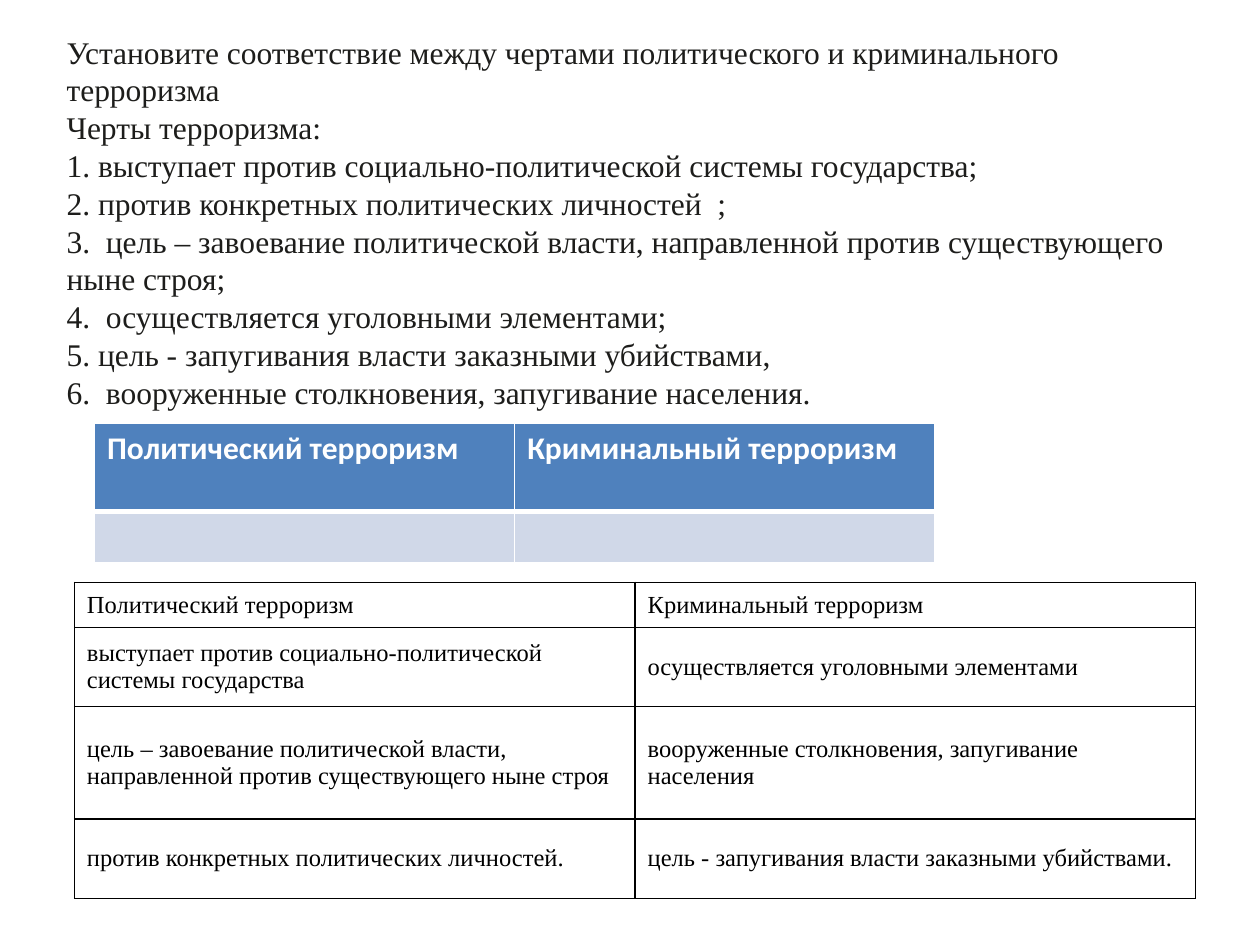
from lxml.etree import SubElement
from pptx import Presentation
from pptx.dml.color import RGBColor
from pptx.enum.text import MSO_ANCHOR, MSO_AUTO_SIZE
from pptx.oxml.ns import qn
from pptx.util import Inches, Pt

INK = RGBColor(0x1D, 0x1D, 0x1B)
BLACK = RGBColor(0x00, 0x00, 0x00)
WHITE = RGBColor(0xFF, 0xFF, 0xFF)
BLUE = RGBColor(0x4F, 0x81, 0xBD)
PALE_BLUE = RGBColor(0xD0, 0xD8, 0xE8)
SERIF = "Times New Roman"
SANS = "Calibri"

TASK = [
    "Установите соответствие между чертами политического и криминального терроризма",
    "Черты терроризма:",
    "1. выступает против социально-политической системы государства;",
    "2. против конкретных политических личностей  ;",
    "3.  цель – завоевание политической власти, направленной против существующего ныне строя;",
    "4.  осуществляется уголовными элементами;",
    "5. цель - запугивания власти заказными убийствами,",
    "6.  вооруженные столкновения, запугивание населения.",
]
HEADINGS = ("Политический терроризм", "Криминальный терроризм")
ANSWERS = [
    HEADINGS,
    ("выступает против социально-политической системы государства",
     "осуществляется уголовными элементами"),
    ("цель – завоевание политической власти, направленной против существующего ныне строя",
     "вооруженные столкновения, запугивание населения"),
    ("против конкретных политических личностей.",
     "цель - запугивания власти заказными убийствами."),
]


def write_text(text_frame, lines, *, font, size, color, bold=False):
    for index, line in enumerate(lines):
        paragraph = text_frame.add_paragraph() if index else text_frame.paragraphs[0]
        paragraph.text = line
        paragraph.font.name = font
        paragraph.font.size = Pt(size)
        paragraph.font.bold = bold
        paragraph.font.color.rgb = color


def set_borders(cell, color, widths):
    """Draw cell borders; widths are points for left, right, top and bottom."""
    properties = cell._tc.get_or_add_tcPr()
    for position, (side, width) in enumerate(zip("LRTB", widths)):
        line = SubElement(properties, qn(f"a:ln{side}"), w=str(Pt(width)))
        fill = SubElement(line, qn("a:solidFill"))
        SubElement(fill, qn("a:srgbClr"), val=str(color))
        properties.insert(position, line)


class SlideBuilder:
    def __init__(self, slide):
        self.slide = slide

    def add_text(self, lines, left, top, width, height, **text_format):
        shape = self.slide.shapes.add_textbox(
            Inches(left), Inches(top), Inches(width), Inches(height))
        shape.text_frame.word_wrap = True
        shape.text_frame.auto_size = MSO_AUTO_SIZE.SHAPE_TO_FIT_TEXT
        write_text(shape.text_frame, lines, **text_format)

    def add_table(self, rows, left, top, width, heights, *, fills, border,
                  border_widths, anchor, **text_format):
        """Add a table; fills and border_widths hold one entry per row."""
        shape = self.slide.shapes.add_table(
            len(rows), len(rows[0]), Inches(left), Inches(top),
            Inches(width), Inches(sum(heights)))
        table = shape.table
        for row_index, texts in enumerate(rows):
            table.rows[row_index].height = Inches(heights[row_index])
            for column_index, text in enumerate(texts):
                cell = table.cell(row_index, column_index)
                cell.vertical_anchor = anchor
                cell.fill.solid()
                cell.fill.fore_color.rgb = fills[row_index]
                set_borders(cell, border, border_widths[row_index])
                write_text(cell.text_frame, [text], **text_format)


def main():
    presentation = Presentation()
    presentation.slide_width = Inches(10)
    presentation.slide_height = Inches(7.5)
    builder = SlideBuilder(presentation.slides.add_slide(presentation.slide_layouts[6]))

    builder.add_text(TASK, 0.43, 0.21, 8.98, 3.47, font=SERIF, size=18, color=INK)
    builder.add_table(
        [HEADINGS, ("", "")], 0.75, 3.36, 6.67, [0.7, 0.41],
        fills=[BLUE, PALE_BLUE], border=WHITE,
        border_widths=[(1, 1, 1, 3), (1, 1, 3, 1)], anchor=MSO_ANCHOR.TOP,
        font=SANS, size=18, color=WHITE, bold=True)
    builder.add_table(
        ANSWERS, 0.59, 4.62, 8.9, [0.36, 0.63, 0.89, 0.63],
        fills=[WHITE] * len(ANSWERS), border=BLACK,
        border_widths=[(0.75,) * 4] * len(ANSWERS), anchor=MSO_ANCHOR.MIDDLE,
        font=SERIF, size=14, color=BLACK)

    presentation.save("out.pptx")


if __name__ == "__main__":
    main()
